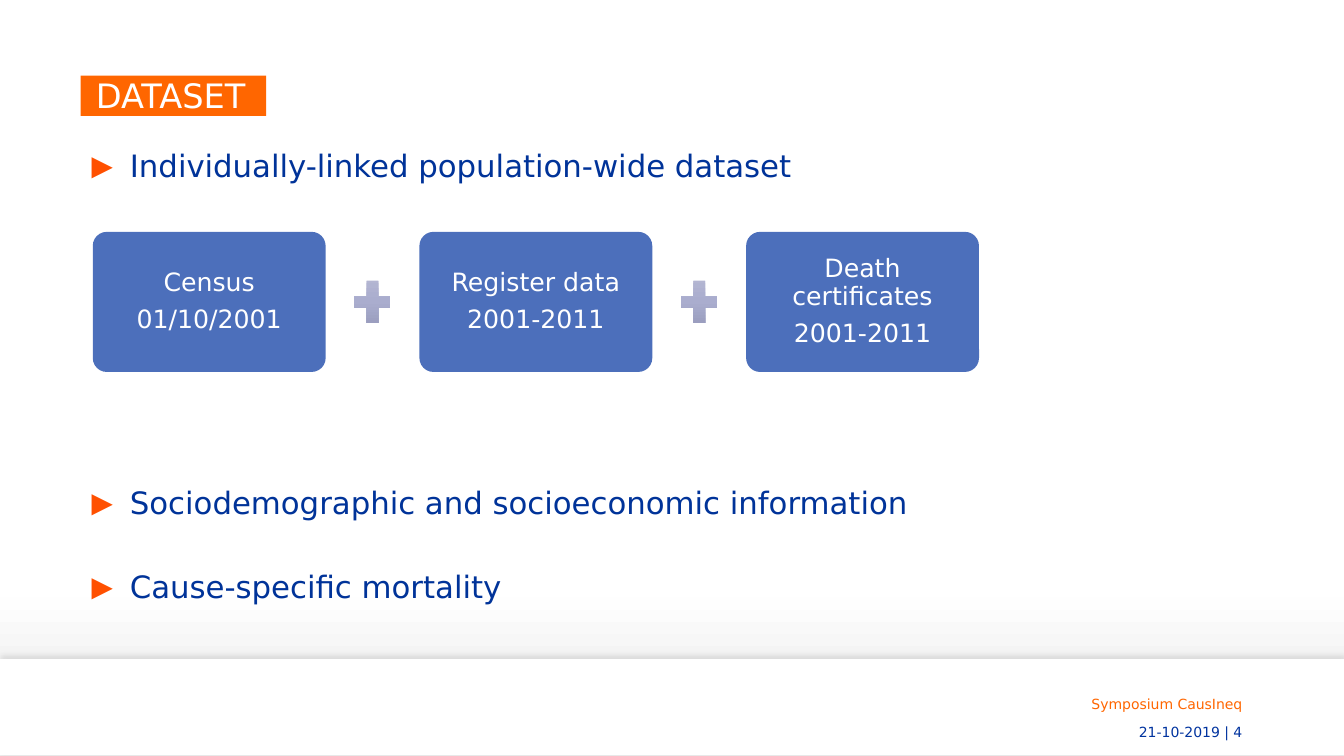
from lxml import etree
from pptx import Presentation
from pptx.dml.color import RGBColor
from pptx.enum.shapes import MSO_SHAPE
from pptx.enum.text import MSO_ANCHOR, MSO_AUTO_SIZE, PP_ALIGN
from pptx.oxml.ns import qn
from pptx.util import Inches, Pt

RECT, ROUNDED, PLUS = MSO_SHAPE.RECTANGLE, MSO_SHAPE.ROUNDED_RECTANGLE, MSO_SHAPE.MATH_PLUS
LEFT, CENTER, RIGHT = PP_ALIGN.LEFT, PP_ALIGN.CENTER, PP_ALIGN.RIGHT
MIDDLE, BOTTOM = MSO_ANCHOR.MIDDLE, MSO_ANCHOR.BOTTOM
NO_AUTOFIT = MSO_AUTO_SIZE.NONE
FONT = "DejaVu Sans"
ORANGE, BLUE, NAVY, WHITE = "FF6600", "003399", "00339F", "FFFFFF"
BACKDROP = [(0, "FFFFFF"), (79, "FEFEFE"), (92, "EDEDED"), (100, "EDEDED")]
PLUS_STOPS = [(0, "B6B8D3"), (50, "AAADCE"), (100, "9498B9")]
BULLETS = [("Individually-linked population-wide dataset", 0),
           ("Sociodemographic and socioeconomic information", 216),
           ("Cause-specific mortality", 35)]
SOURCES = [("Census", "01/10/2001"),
           ("Register data", "2001-2011"),
           ("Death certificates", "2001-2011")]


def rgb(color):
    return RGBColor.from_string(color)


def add(parent, tag, **attrs):
    return etree.SubElement(parent, qn(tag), attrs)


def format_text(p, size, color, align, spacing=1.0, before=0):
    p.alignment = align
    p.line_spacing = spacing
    p.space_before = Pt(before)
    for r in p.runs:
        r.font.name = FONT
        r.font.size = Pt(size)
        r.font.color.rgb = rgb(color)


def set_insets(tf, left, top, right, bottom):
    tf.margin_left, tf.margin_top = Inches(left), Inches(top)
    tf.margin_right, tf.margin_bottom = Inches(right), Inches(bottom)


def vertical_gradient(fill, element, stops):
    fill.gradient()
    fill.gradient_angle = 270
    stop_list = next(element.iter(qn("a:gsLst")))
    for stop in list(stop_list):
        stop_list.remove(stop)
    for position, color in stops:
        stop = add(stop_list, "a:gs", pos=str(position * 1000))
        add(stop, "a:srgbClr", val=color)


def add_shape(s, kind, x, y, w, h):
    sp = s.shapes.add_shape(kind, Inches(x), Inches(y), Inches(w), Inches(h))
    sp.shadow.inherit = False
    sp.line.fill.background()
    return sp


def add_text_box(s, x, y, w, h):
    tf = s.shapes.add_textbox(Inches(x), Inches(y), Inches(w), Inches(h)).text_frame
    tf.word_wrap = True
    return tf


def add_title(s, x, y, w, h):
    title = s.shapes.title
    title.left, title.top, title.width, title.height = map(Inches, (x, y, w, h))
    title.fill.solid()
    title.fill.fore_color.rgb = rgb(ORANGE)
    tf = title.text_frame
    tf.text = "DATASET"
    tf.auto_size = NO_AUTOFIT
    tf.word_wrap = False
    tf.vertical_anchor = BOTTOM
    set_insets(tf, 0.15, 0.04, 0.16, 0)
    format_text(tf.paragraphs[0], 24, WHITE, LEFT, 0.9)


def add_bullets(s, x, y, w, h):
    tf = add_text_box(s, x, y, w, h)
    tf.text = "\n".join(text for text, _ in BULLETS)
    for p, (_, before) in zip(tf.paragraphs, BULLETS):
        format_text(p, 22, BLUE, LEFT, 0.95, before)
        pPr = p._p.get_or_add_pPr()
        pPr.set("marL", str(Inches(0.39)))
        pPr.set("indent", str(Inches(-0.38)))
        add(add(pPr, "a:buClr"), "a:srgbClr", val="FF5000")
        add(pPr, "a:buSzPct", val="90000")
        add(pPr, "a:buFont", typeface=FONT)
        add(pPr, "a:buChar", char="▶︎")


def add_card(s, lines, x, y, w, h):
    card = add_shape(s, ROUNDED, x, y, w, h)
    card.adjustments[0] = 0.1
    card.fill.solid()
    card.fill.fore_color.rgb = rgb(NAVY)
    add(next(card.element.spPr.iter(qn("a:srgbClr"))), "a:alpha", val="70000")
    tf = card.text_frame
    tf.text = "\n".join(lines)
    tf.word_wrap = True
    tf.vertical_anchor = MIDDLE
    set_insets(tf, 0.07, 0.07, 0.07, 0.07)
    for i, p in enumerate(tf.paragraphs):
        format_text(p, 18, WHITE, CENTER, 0.9, 7 * i)


def add_sources(s, x, y, w, h):
    card_w = 2.31
    pitch = (w - card_w) / (len(SOURCES) - 1)
    plus_w, plus_h = 0.49, 0.57
    for i, lines in enumerate(SOURCES):
        left = x + i * pitch
        if i:
            plus_x = left - (pitch - card_w + plus_w) / 2
            plus = add_shape(s, PLUS, plus_x, y + (h - plus_h) / 2, plus_w, plus_h)
            vertical_gradient(plus.fill, plus.element, PLUS_STOPS)
        add_card(s, lines, left, y, card_w, h)


def add_footer(s, x, y, w, h):
    band = add_shape(s, RECT, x, y, w, h)
    band.fill.solid()
    band.fill.fore_color.rgb = rgb(WHITE)
    effects = band.element.spPr.find(qn("a:effectLst"))
    shadow = add(effects, "a:outerShdw", blurRad=str(Pt(4)), dist=str(Pt(3)),
                 dir="16200000", rotWithShape="0")
    add(add(shadow, "a:srgbClr", val="000000"), "a:alpha", val="10000")
    tf = add_text_box(s, x + w - 3.91, y + 0.31, 3, 0.5)
    tf.text = "Symposium CausIneq\n21-10-2019 | 4"
    event, date = tf.paragraphs
    format_text(event, 10, ORANGE, RIGHT)
    format_text(date, 10, NAVY, RIGHT, before=8.3)


def build_dataset_slide(prs):
    s = prs.slides.add_slide(prs.slide_layouts[5])
    fill = s.background.fill
    vertical_gradient(fill, s.element, BACKDROP)
    add_footer(s, 0, 6.54, 13.33, 0.95)
    add_bullets(s, 0.8, 1.43, 11.62, 4.7)
    add_title(s, 0.8, 0.75, 1.84, 0.4)
    add_sources(s, 0.92, 2.3, 8.79, 1.39)


def main():
    prs = Presentation()
    prs.slide_width, prs.slide_height = Inches(13.33), Inches(7.5)
    build_dataset_slide(prs)
    prs.save("out.pptx")


if __name__ == "__main__":
    main()
